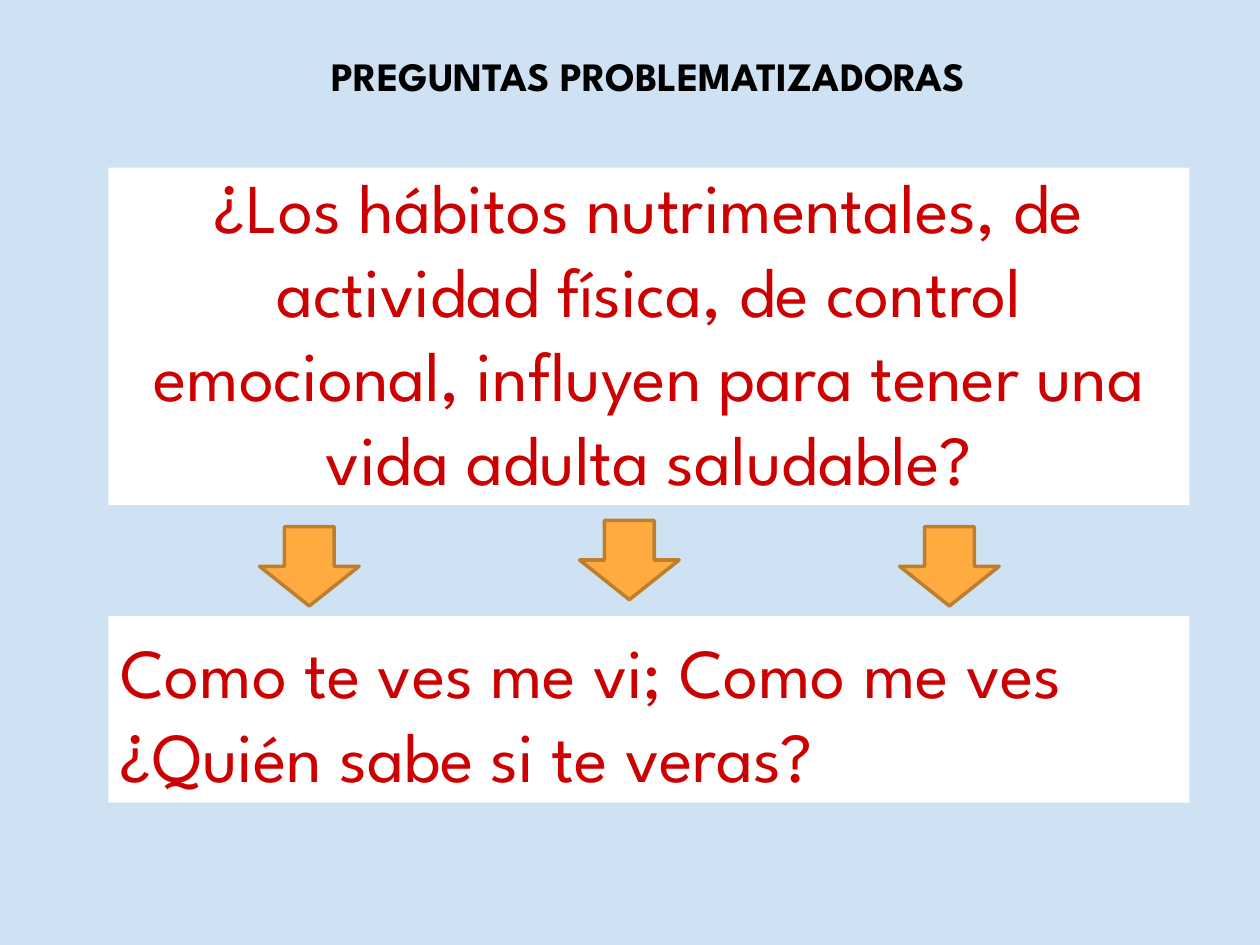
from pptx import Presentation
from pptx.dml.color import RGBColor
from pptx.enum.shapes import MSO_SHAPE
from pptx.enum.text import MSO_ANCHOR, PP_ALIGN
from pptx.util import Inches, Pt

FONT = "League Spartan"
BACKGROUND = "CFE2F3"
WHITE = "FFFFFF"
BLACK = "000000"
RED = "CC0000"
ORANGE = "FFAB40"
BROWN = "BD7F2F"

PANEL_LEFT, PANEL_WIDTH = 0.86, 8.58
ARROW_LEFT, ARROW_STEP = 2.06, 2.54
ARROW_TOPS = (4.18, 4.13, 4.18)


def set_fill(fill, color):
    fill.solid()
    fill.fore_color.rgb = RGBColor.from_string(color)


def add_text(slide, text, left, top, width, height, *, size, color, bold=False,
             fill=None, align=PP_ALIGN.LEFT, anchor=MSO_ANCHOR.TOP, padding=0.05):
    """Add a wrapped text box; padding is the top and bottom inset."""
    box = slide.shapes.add_textbox(Inches(left), Inches(top), Inches(width), Inches(height))
    if fill:
        set_fill(box.fill, fill)
    frame = box.text_frame
    frame.word_wrap = True
    frame.vertical_anchor = anchor
    frame.margin_left = frame.margin_right = Inches(0.1)
    frame.margin_top = frame.margin_bottom = Inches(padding)
    paragraph = frame.paragraphs[0]
    paragraph.alignment = align
    run = paragraph.add_run()
    run.text = text
    run.font.name = FONT
    run.font.size = Pt(size)
    run.font.bold = bold
    run.font.color.rgb = RGBColor.from_string(color)


def add_panel(slide, text, top, height, align):
    add_text(slide, text, PANEL_LEFT, top, PANEL_WIDTH, height, size=40, color=RED,
             fill=WHITE, align=align, anchor=MSO_ANCHOR.BOTTOM)


def add_down_arrow(slide, left, top):
    arrow = slide.shapes.add_shape(MSO_SHAPE.DOWN_ARROW, Inches(left), Inches(top),
                                   Inches(0.79), Inches(0.63))
    arrow.shadow.inherit = False
    set_fill(arrow.fill, ORANGE)
    set_fill(arrow.line.fill, BROWN)
    arrow.line.width = Pt(2)


def main():
    presentation = Presentation()
    presentation.slide_width = Inches(10)
    presentation.slide_height = Inches(7.5)
    slide = presentation.slides.add_slide(presentation.slide_layouts[6])
    set_fill(slide.background.fill, BACKGROUND)

    add_text(slide, "PREGUNTAS PROBLEMATIZADORAS", 2.31, 0.31, 5.68, 0.57, size=23,
             color=BLACK, bold=True, align=PP_ALIGN.CENTER, padding=0.1)
    add_panel(slide, "Como te ves me vi; Como me ves ¿Quién sabe si te veras?",
              4.89, 1.48, PP_ALIGN.LEFT)
    add_panel(slide, "¿Los hábitos nutrimentales, de actividad física, de control "
              "emocional, influyen para tener una vida adulta saludable?",
              1.33, 2.68, PP_ALIGN.CENTER)
    for index, top in enumerate(ARROW_TOPS):
        add_down_arrow(slide, ARROW_LEFT + index * ARROW_STEP, top)

    presentation.save("out.pptx")


if __name__ == "__main__":
    main()
